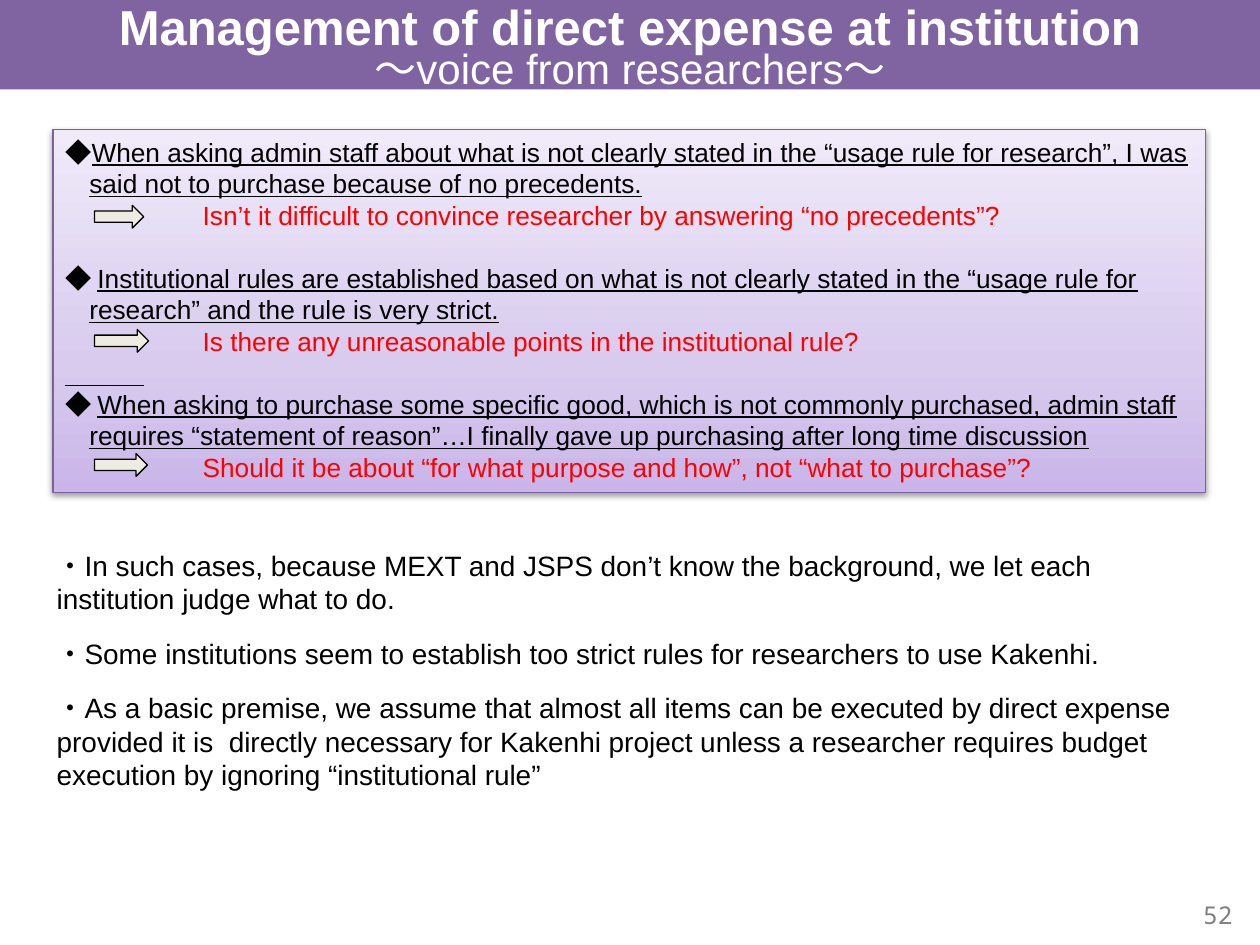
from lxml import etree
from pptx import Presentation, util as u
from pptx.dml.color import RGBColor
from pptx.enum import shapes, text
from pptx.oxml.ns import qn

INK = {"band": "8064A2", "edge": "7D60A0", "low": "C9B5E8", "mid": "D8CBEE",
       "high": "F0EAF9", "arrow": "EEECE1", "black": "000000", "red": "FF0000",
       "white": "FFFFFF", "grey": "808080"}
WIDE, TALL = 10, 7.5
LEFT, TOP = 0.42, 1.03
STEP = 0.985  # from one voice to the next

VOICES = [
    ("◆", "When asking admin staff about what is not clearly stated in the “usage rule for "
     "research”, I was said not to purchase because of no precedents.",
     "Isn’t it difficult to convince researcher by answering “no precedents”?", 0.39),
    ("◆ ", "Institutional rules are established based on what is not clearly stated in the "
     "“usage rule for research” and the rule is very strict.",
     "Is there any unreasonable points in the institutional rule?", 0.43),
    ("◆ ", "When asking to purchase some specific good, which is not commonly purchased, admin "
     "staff requires “statement of reason”…I finally gave up purchasing after long time "
     "discussion",
     "Should it be about “for what purpose and how”, not “what to purchase”?", 0.42),
]
NOTES = [
    "・In such cases, because MEXT and JSPS don’t know the background, we let each institution "
    "judge what to do.",
    "・Some institutions seem to establish too strict rules for researchers to use Kakenhi.",
    "・As a basic premise, we assume that almost all items can be executed by direct expense "
    "provided it is  directly necessary for Kakenhi project unless a researcher requires budget "
    "execution by ignoring “institutional rule”",
]


def rgb(name):
    return RGBColor.from_string(INK[name])


def place(shape, *box):
    shape.left, shape.top, shape.width, shape.height = map(u.Inches, box)


def add(parent, tag, **attrs):
    return etree.SubElement(parent, qn(tag), {k: str(v) for k, v in attrs.items()})


def style(para, size, color, bold=False, font="Arial"):
    para.font.size, para.font.bold, para.font.name = u.Pt(size), bold, font
    para.font.color.rgb = rgb(color)


def lines(frame, count):
    """Return the frame's paragraphs, grown to the given count."""
    frame.word_wrap = True
    frame.auto_size = text.MSO_AUTO_SIZE.NONE
    while len(frame.paragraphs) < count:
        frame.add_paragraph()
    return frame.paragraphs


def space(para, pitch, after=0, margin=0, indent=0):
    para.alignment = text.PP_ALIGN.LEFT
    para.line_spacing, para.space_before, para.space_after = u.Pt(pitch), u.Pt(0), u.Pt(after)
    props = para._p.get_or_add_pPr()
    props.set("marL", str(u.Inches(margin)))
    props.set("indent", str(u.Inches(indent)))


def title(slide):
    band = slide.shapes.title
    place(band, 0, 0, WIDE, 0.71)
    band.fill.solid()
    band.fill.fore_color.rgb = rgb("band")
    frame = band.text_frame
    frame.vertical_anchor = text.MSO_ANCHOR.MIDDLE
    head, sub = lines(frame, 2)
    head.text = "Management of direct expense at institution"
    sub.text = "～voice from researchers～"
    style(head, 28, "white", bold=True)
    style(sub, 24, "white")
    sub.line_spacing = u.Pt(21)
    for para in (head, sub):
        para.alignment = text.PP_ALIGN.CENTER


def shade(shape):
    """Give the panel its three-stop gradient and soft shadow."""
    shape.fill.gradient()
    shape.fill.gradient_angle = 90
    props = shape._element.spPr
    stops = props.find(".//" + qn("a:gsLst"))
    for stop in list(stops):
        stops.remove(stop)
    for pos, name in ((0, "low"), (35, "mid"), (100, "high")):
        add(add(stops, "a:gs", pos=pos * 1000), "a:srgbClr", val=INK[name])
    shape.shadow.inherit = False
    glow = add(props.find(qn("a:effectLst")), "a:outerShdw", blurRad=u.Pt(3.1),
               dist=u.Pt(1.6), dir=90 * 60000, rotWithShape=0)
    add(add(glow, "a:srgbClr", val=INK["black"]), "a:alpha", val=38000)


def voice(ask, reply, mark, quote, answer, last):
    space(ask, 18, margin=0.19, indent=-0.19)
    style(ask, 15, "black")
    sign = ask.add_run()
    sign.text, sign.font.name = mark, "Noto Sans CJK JP"
    add(sign._r.get_or_add_rPr(), "a:ea", typeface="Noto Sans CJK JP")
    said = ask.add_run()
    said.text, said.font.underline = quote, True
    space(reply, 18, after=0 if last else 18, margin=1.09)
    style(reply, 15, "red")
    reply.add_run().text = answer


def panel(slide):
    box = slide.shapes.add_shape(shapes.MSO_SHAPE.RECTANGLE, 0, 0, 0, 0)
    place(box, LEFT, TOP, 9.15, 2.88)
    shade(box)
    box.line.color.rgb, box.line.width = rgb("edge"), u.Pt(0.75)
    box.text_frame.vertical_anchor = text.MSO_ANCHOR.TOP
    paras = lines(box.text_frame, 2 * len(VOICES))
    for i, (mark, quote, answer, width) in enumerate(VOICES):
        voice(paras[2 * i], paras[2 * i + 1], mark, quote, answer, i == len(VOICES) - 1)
        arrow(slide, TOP + 0.6 + i * STEP, width)


def arrow(slide, top, width):
    tip = slide.shapes.add_shape(shapes.MSO_SHAPE.RIGHT_ARROW, 0, 0, 0, 0)
    place(tip, LEFT + 0.33, top, width, 0.18)
    tip.shadow.inherit = False
    tip.fill.solid()
    tip.fill.fore_color.rgb = rgb("arrow")
    tip.line.color.rgb, tip.line.width = rgb("black"), u.Pt(0.75)


def rule(slide, left, top, width):
    line = slide.shapes.add_connector(shapes.MSO_CONNECTOR.STRAIGHT, u.Inches(left),
                                      u.Inches(top), u.Inches(left + width), u.Inches(top))
    line.line.color.rgb, line.line.width = rgb("black"), u.Pt(0.75)
    add(line._element.spPr, "a:effectLst")


def notes(slide):
    body = slide.placeholders[1]
    place(body, 0.35, 4.3, 9.29, 2.05)
    for para, words in zip(lines(body.text_frame, len(NOTES)), NOTES):
        para.text = words
        space(para, 19.2, after=12)
        add(para._p.get_or_add_pPr(), "a:buNone")
        style(para, 16, "black")


def number(slide):
    box = slide.shapes.add_textbox(0, 0, 0, 0)
    place(box, 9.45, 7.09, 0.56, 0.34)
    box.text_frame.vertical_anchor = text.MSO_ANCHOR.MIDDLE
    para = lines(box.text_frame, 1)[0]
    para.text = "52"
    style(para, 14, "grey", font="Noto Sans Mono")


def main():
    deck = Presentation()
    deck.slide_width, deck.slide_height = u.Inches(WIDE), u.Inches(TALL)
    slide = deck.slides.add_slide(deck.slide_layouts[1])
    title(slide)
    panel(slide)
    rule(slide, LEFT + 0.1, 3.06, 0.62)
    notes(slide)
    number(slide)
    deck.save("out.pptx")


if __name__ == "__main__":
    main()
